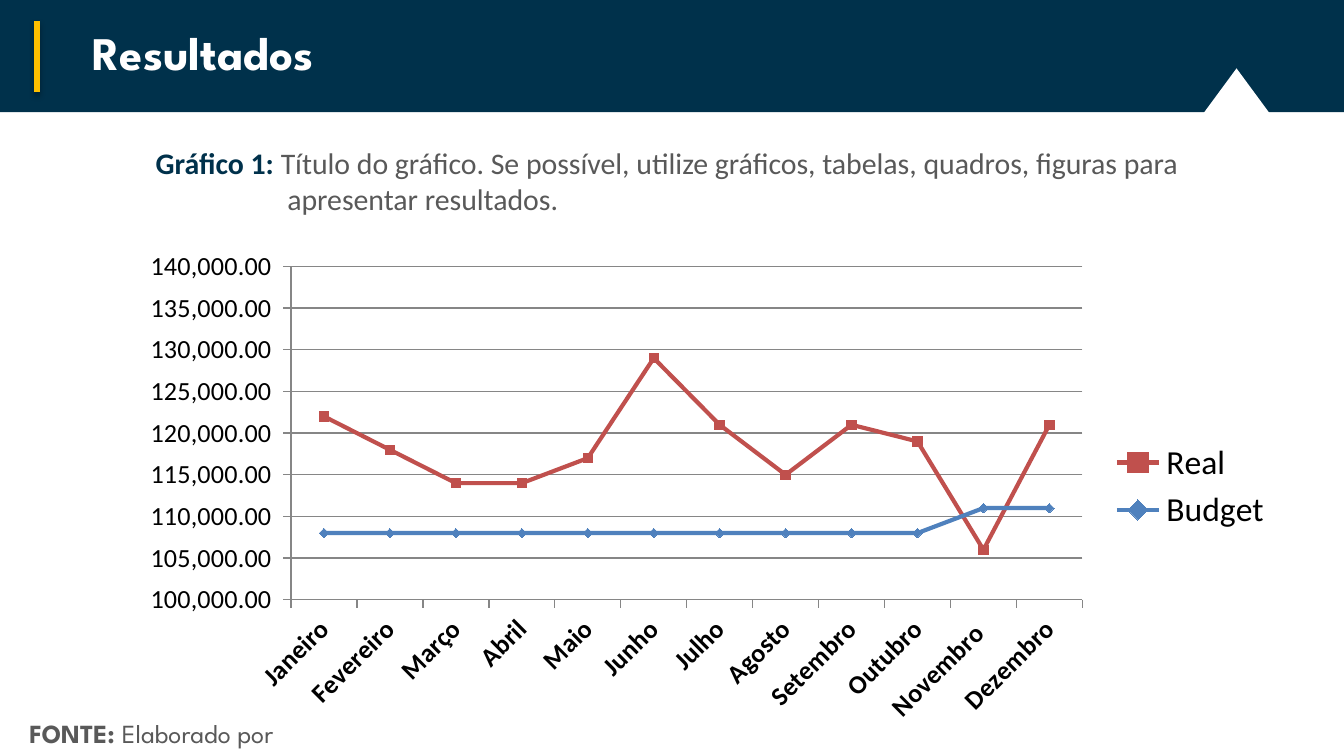
from dataclasses import dataclass

from lxml.etree import SubElement
from pptx import Presentation
from pptx.chart.data import CategoryChartData as ChartData
from pptx.dml.color import RGBColor
from pptx.enum.chart import XL_CHART_TYPE as Kind, XL_LEGEND_POSITION as Side
from pptx.enum.chart import XL_MARKER_STYLE as Mark, XL_TICK_MARK as Tick
from pptx.enum.shapes import MSO_CONNECTOR as Conn, MSO_SHAPE as Form
from pptx.enum.text import MSO_ANCHOR as Anchor, MSO_AUTO_SIZE as Fit
from pptx.oxml import parse_xml
from pptx.oxml.ns import nsdecls, qn
from pptx.util import Inches, Pt

NAVY = RGBColor(0x00, 0x31, 0x4B)
GOLD = RGBColor(0xFF, 0xC0, 0x00)
WHITE = RGBColor(0xFF, 0xFF, 0xFF)
BLACK = RGBColor(0x00, 0x00, 0x00)
GRAY = RGBColor(0x59, 0x59, 0x59)
RULE = RGBColor(0x86, 0x86, 0x86)
RED = RGBColor(0xC0, 0x50, 0x4D)
BLUE = RGBColor(0x4F, 0x81, 0xBD)
HEAD = "League Spartan"
BODY = "Calibri"
WIDE = Inches(10)
TALL = WIDE * 9 // 16
COL, ROW = WIDE / 100, TALL / 100


@dataclass(frozen=True)
class Box:
    x: float
    y: float
    w: float
    h: float

    def emu(self) -> tuple[int, ...]:
        return (int(self.x * COL), int(self.y * ROW),
                int(self.w * COL), int(self.h * ROW))


@dataclass(frozen=True)
class Run:
    text: str
    size: int
    font: str
    color: RGBColor
    bold: bool = False


@dataclass(frozen=True)
class Line:
    name: str
    rank: int
    color: RGBColor
    mark: Mark
    vals: tuple[int, ...]


MONTHS = ("Janeiro", "Fevereiro", "Março", "Abril", "Maio", "Junho", "Julho",
          "Agosto", "Setembro", "Outubro", "Novembro ", "Dezembro")
LINES = (
    Line("Real", 1, RED, Mark.SQUARE,
         (122000, 118000, 114000, 114000, 117000, 129000,
          121000, 115000, 121000, 119000, 106000, 121000)),
    Line("Budget", 0, BLUE, Mark.DIAMOND, (108000,) * 10 + (111000,) * 2),
)


def add_form(slide, form: Form, box: Box, color: RGBColor) -> None:
    shape = slide.shapes.add_shape(form, *box.emu())
    shape.shadow.inherit = False
    shape.fill.solid()
    shape.fill.fore_color.rgb = color
    shape.line.fill.background()


def add_bar(slide, box: Box) -> None:
    x, y, w, h = box.emu()
    bar = slide.shapes.add_connector(Conn.STRAIGHT, x, y, x + w, y + h)
    bar.line.color.rgb = GOLD
    bar.line.width = Pt(3)
    bar._element.spPr.append(parse_xml(
        f'<a:effectLst {nsdecls("a")}><a:outerShdw blurRad="40000" '
        'dist="23000" dir="5400000" rotWithShape="0"><a:srgbClr val="000000">'
        '<a:alpha val="35000"/></a:srgbClr></a:outerShdw></a:effectLst>'))


def add_text(slide, box: Box, runs: tuple[Run, ...], wrap: bool = True,
             fit: Fit = Fit.SHAPE_TO_FIT_TEXT):
    frame = slide.shapes.add_textbox(*box.emu()).text_frame
    frame.word_wrap = wrap
    frame.auto_size = fit
    for item in runs:
        run = frame.paragraphs[0].add_run()
        run.text = item.text
        font = run.font
        font.size, font.name, font.bold = Pt(item.size), item.font, item.bold
        font.color.rgb = item.color
    return frame


def style_axis(axis, bold: bool) -> None:
    axis.major_tick_mark = Tick.OUTSIDE
    axis.minor_tick_mark = Tick.NONE
    axis.tick_labels.font.size = Pt(14)
    axis.tick_labels.font.bold = bold
    axis.format.line.color.rgb = RULE


def style_line(row, line: Line) -> None:
    row.smooth = False
    row.format.line.color.rgb = line.color
    row.format.line.width = Pt(2.25)
    row.marker.style, row.marker.size = line.mark, 5
    row.marker.format.fill.solid()
    row.marker.format.fill.fore_color.rgb = line.color
    row.marker.format.line.color.rgb = line.color
    for tag in ("c:idx", "c:order"):
        row._element.find(qn(tag)).set("val", str(line.rank))


def place_plot(chart, spot: dict[str, float]) -> None:
    area = chart._chartSpace.chart.plotArea
    old = area.find(qn("c:layout"))
    if old is not None:
        area.remove(old)
    layout = parse_xml(f'<c:layout {nsdecls("c")}/>')
    area.insert(0, layout)
    manual = SubElement(layout, qn("c:manualLayout"))
    parts = {"layoutTarget": "inner", "xMode": "edge", "yMode": "edge", **spot}
    for tag, val in parts.items():
        SubElement(manual, qn(f"c:{tag}")).set("val", str(val))


def add_lines(slide, box: Box) -> None:
    data = ChartData()
    data.categories = MONTHS
    for line in LINES:
        data.add_series(line.name, line.vals)
    chart = slide.shapes.add_chart(Kind.LINE_MARKERS, *box.emu(), data).chart
    chart.has_title = False
    chart.font.name, chart.font.size = BODY, Pt(10)
    chart.font.color.rgb = BLACK
    chart.has_legend = True
    chart.legend.position = Side.RIGHT
    chart.legend.include_in_layout = False
    chart.legend.font.size = Pt(18)
    plot = chart.plots[0]
    plot.vary_by_categories = False
    for line, row in zip(LINES, list(plot.series)):
        style_line(row, line)
    cats, vals = chart.category_axis, chart.value_axis
    style_axis(cats, True)
    style_axis(vals, False)
    cats._element.txPr.find(qn("a:bodyPr")).set("rot", "-2700000")
    vals.minimum_scale, vals.maximum_scale = 100000, 140000
    vals.major_unit = 5000
    vals.has_major_gridlines = True
    vals.major_gridlines.format.line.color.rgb = RULE
    vals.tick_labels.number_format = (
        '_(* #,##0.00_);_(* \\(#,##0.00\\);_(* "-"??_);_(@_)')
    vals.tick_labels.number_format_is_linked = False
    place_plot(chart, {"x": 0.145, "y": 0.053, "w": 0.68, "h": 0.678})


def main() -> None:
    deck = Presentation()
    deck.slide_width, deck.slide_height = WIDE, TALL
    slide = deck.slides.add_slide(deck.slide_layouts[6])
    add_form(slide, Form.RECTANGLE, Box(0, 0, 100, 14.85), NAVY)
    add_bar(slide, Box(2.77, 2.8, 0, 9.4))
    add_form(slide, Form.ISOSCELES_TRIANGLE, Box(89.36, 9.05, 5.3, 6.4), WHITE)
    title = add_text(slide, Box(5.9, 0, 94.1, 13.7),
                     (Run("Resultados", 25, HEAD, WHITE, True),), fit=Fit.NONE)
    title.vertical_anchor = Anchor.MIDDLE
    title.paragraphs[0].space_before = Pt(30)
    add_lines(slide, Box(9.1, 31.8, 86.6, 65.07))
    add_text(slide, Box(1.2, 94.05, 22.7, 6.05),
             (Run("FONTE: ", 14, HEAD, GRAY, True),
              Run("Elaborado por", 14, HEAD, GRAY)), wrap=False)
    note = add_text(slide, Box(10.6, 18.31, 85.8, 11.38),
                    (Run("Gráfico 1: ", 16, BODY, NAVY, True),
                     Run("Título do gráfico. Se possível, utilize gráficos, "
                         "tabelas, quadros, figuras para apresentar "
                         "resultados.", 16, BODY, GRAY)))
    props = note.paragraphs[0]._p.get_or_add_pPr()
    props.set("marL", str(int(9.8 * COL)))
    props.set("indent", str(int(-9.8 * COL)))
    deck.save("out.pptx")


if __name__ == "__main__":
    main()
